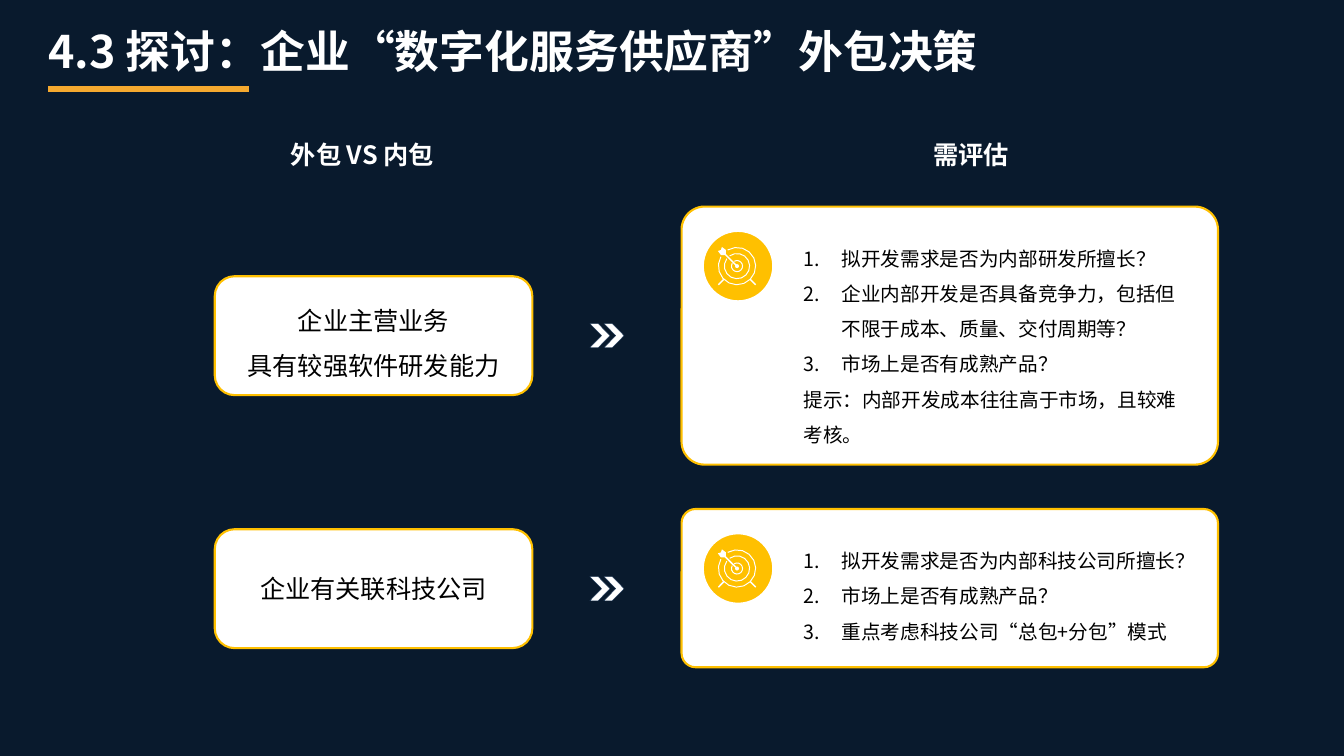
from dataclasses import dataclass
from math import cos, radians, sin

from lxml import etree
from pptx import Presentation
from pptx.dml.color import RGBColor
from pptx.enum import shapes, text
from pptx.oxml import ns
from pptx.util import Inches, Pt

FONT = "Noto Sans CJK SC"
COLORS = {"navy": "091A2D", "orange": "F5A92F", "gold": "FFC000",
          "white": "FFFFFF", "black": "000000", "edge": "0D294B"}
SHAPE = shapes.MSO_SHAPE
ALIGN = text.PP_ALIGN
ANCHOR = text.MSO_ANCHOR


@dataclass
class Row:
    topic_top: float
    topic_lines: list[str]
    topic_spacing: float
    card_top: float
    card_height: float
    questions: list[str]
    hint: str = ""


ROWS = [
    Row(2.74, ["企业主营业务", "具有较强软件研发能力"], 1.5, 2.05, 2.56,
        ["拟开发需求是否为内部研发所擅长？",
         "企业内部开发是否具备竞争力，包括但不限于成本、质量、交付周期等？",
         "市场上是否有成熟产品？"],
        "提示：内部开发成本往往高于市场，且较难考核。"),
    Row(5.25, ["企业有关联科技公司"], 1.0, 5.05, 1.57,
        ["拟开发需求是否为内部科技公司所擅长？",
         "市场上是否有成熟产品？",
         "重点考虑科技公司“总包+分包”模式"]),
]


def rgb(name: str) -> RGBColor:
    return RGBColor.from_string(COLORS[name])


def write(tf, lines: list[str], *, size: float, color: str, bold: bool = False,
          align=ALIGN.LEFT, anchor=ANCHOR.TOP, spacing: float = 1.0,
          wrap: bool = True, numbered: int = 0) -> None:
    """Fill a text frame; the first `numbered` lines become a numbered list."""
    tf.word_wrap = wrap
    tf.vertical_anchor = anchor
    for i, line in enumerate(lines):
        p = tf.paragraphs[0] if i == 0 else tf.add_paragraph()
        p.alignment = align
        p.line_spacing = spacing
        if i < numbered:
            pPr = p._p.get_or_add_pPr()
            pPr.set("marL", str(Inches(0.38)))
            pPr.set("indent", str(-Inches(0.38)))
            etree.SubElement(pPr, ns.qn("a:buFont"), typeface="+mj-lt")
            etree.SubElement(pPr, ns.qn("a:buAutoNum"), type="arabicPeriod")
        r = p.add_run()
        r.text = line
        r.font.size, r.font.bold, r.font.name = Pt(size), bold, FONT
        r.font.color.rgb = rgb(color)
        etree.SubElement(r._r.get_or_add_rPr(), ns.qn("a:ea"), typeface=FONT)


def add_text(s, left: float, top: float, width: float, height: float,
             lines: list[str], **fmt) -> None:
    box = s.shapes.add_textbox(Inches(left), Inches(top), Inches(width), Inches(height))
    write(box.text_frame, lines, **fmt)


def add_shape(s, kind, left: float, top: float, width: float, height: float, *,
              fill: str, line: str = "", line_width: float = 0,
              adj: float | None = None):
    sp = s.shapes.add_shape(kind, Inches(left), Inches(top), Inches(width), Inches(height))
    sp.shadow.inherit = False
    sp.fill.solid()
    sp.fill.fore_color.rgb = rgb(fill)
    if line:
        sp.line.color.rgb = rgb(line)
        sp.line.width = Pt(line_width)
    else:
        sp.line.fill.background()
    if adj is not None:
        sp.adjustments[0] = adj
    return sp


def arc(radius: float, start: float, end: float, steps: int = 14) -> list[tuple[float, float]]:
    angles = [radians(start + (end - start) * i / steps) for i in range(steps + 1)]
    return [(radius * cos(a), radius * sin(a)) for a in angles]


def ring(outer: float, inner: float, gap: int) -> list[tuple[float, float]]:
    """Circular band, open towards the upper left where the dart passes."""
    start, end = 225 + gap - 360, 225 - gap
    return arc(outer, start, end) + arc(inner, end, start)


def add_target(s, cx: float, cy: float) -> None:
    """Dartboard on two legs with a dart in the middle."""
    dart = [(-0.02, -0.01), (-0.12, -0.11), (-0.16, -0.11), (-0.19, -0.15),
            (-0.16, -0.16), (-0.15, -0.19), (-0.11, -0.16), (-0.11, -0.12),
            (-0.01, -0.02)]
    leg = [(0.13, 0.14), (0.14, 0.13), (0.19, 0.18), (0.18, 0.19)]
    contours = [ring(0.19, 0.18, 15), ring(0.13, 0.12, 9), ring(0.06, 0.05, 15),
                arc(0.02, 0, 315, 7), dart, leg, [(-x, y) for x, y in leg]]
    builder = None
    for contour in contours:
        points = [(Inches(cx + x), Inches(cy + y)) for x, y in contour]
        if builder is None:
            builder = s.shapes.build_freeform(*points[0])
        else:
            builder.move_to(*points[0])
        builder.add_line_segments(points[1:], close=True)
    sp = builder.convert_to_shape()
    sp.shadow.inherit = False
    sp.fill.solid()
    sp.fill.fore_color.rgb = rgb("white")
    sp.line.fill.background()


def add_row(s, row: Row) -> None:
    topic = add_shape(s, SHAPE.ROUNDED_RECTANGLE, 2.13, row.topic_top, 3.15, 1.18,
                      fill="white", line="gold", line_width=1.5, adj=0.167)
    write(topic.text_frame, row.topic_lines, size=18, color="black",
          align=ALIGN.CENTER, anchor=ANCHOR.MIDDLE, spacing=row.topic_spacing)
    for left in (5.85, 5.99):
        add_shape(s, SHAPE.CHEVRON, left, row.topic_top + 0.47, 0.2, 0.24,
                  fill="white", line="edge", line_width=0.25, adj=0.588)

    add_shape(s, SHAPE.ROUNDED_RECTANGLE, 6.76, row.card_top, 5.32, row.card_height,
              fill="white", line="gold", line_width=1.5, adj=0.089)
    content_top = row.card_top + 0.23
    add_shape(s, SHAPE.OVAL, 6.96, content_top, 0.72, 0.72,
              fill="gold", line="white", line_width=3)
    add_target(s, 7.31, content_top + 0.36)
    lines = row.questions + ([row.hint] if row.hint else [])
    add_text(s, 7.87, content_top, 4, row.card_height - 0.36, lines, size=14,
             color="black", spacing=1.5, numbered=len(row.questions))


def add_title(s) -> None:
    rule = s.shapes.add_connector(shapes.MSO_CONNECTOR.STRAIGHT, Inches(0.48),
                                  Inches(0.88), Inches(2.47), Inches(0.88))
    rule.line.color.rgb = rgb("orange")
    rule.line.width = Pt(4.5)
    etree.SubElement(rule._element.spPr, ns.qn("a:effectLst"))
    add_text(s, 0.38, 0.23, 11.81, 0.6, ["4.3 探讨：企业“数字化服务供应商”外包决策"],
             size=32, color="white", bold=True, anchor=ANCHOR.BOTTOM, spacing=0.9)


def main() -> None:
    prs = Presentation()
    prs.slide_width, prs.slide_height = Inches(13.33), Inches(7.5)
    s = prs.slides.add_slide(prs.slide_layouts[6])
    add_shape(s, SHAPE.RECTANGLE, 0, 0, 13.33, 7.5, fill="navy")
    add_title(s)
    heading = dict(size=18, color="white", bold=True, align=ALIGN.CENTER)
    add_text(s, 2.75, 1.33, 1.69, 0.4, ["外包 VS 内包"], **heading)
    add_text(s, 9.15, 1.33, 0.96, 0.4, ["需评估"], wrap=False, **heading)
    for row in ROWS:
        add_row(s, row)
    prs.save("out.pptx")


if __name__ == "__main__":
    main()
